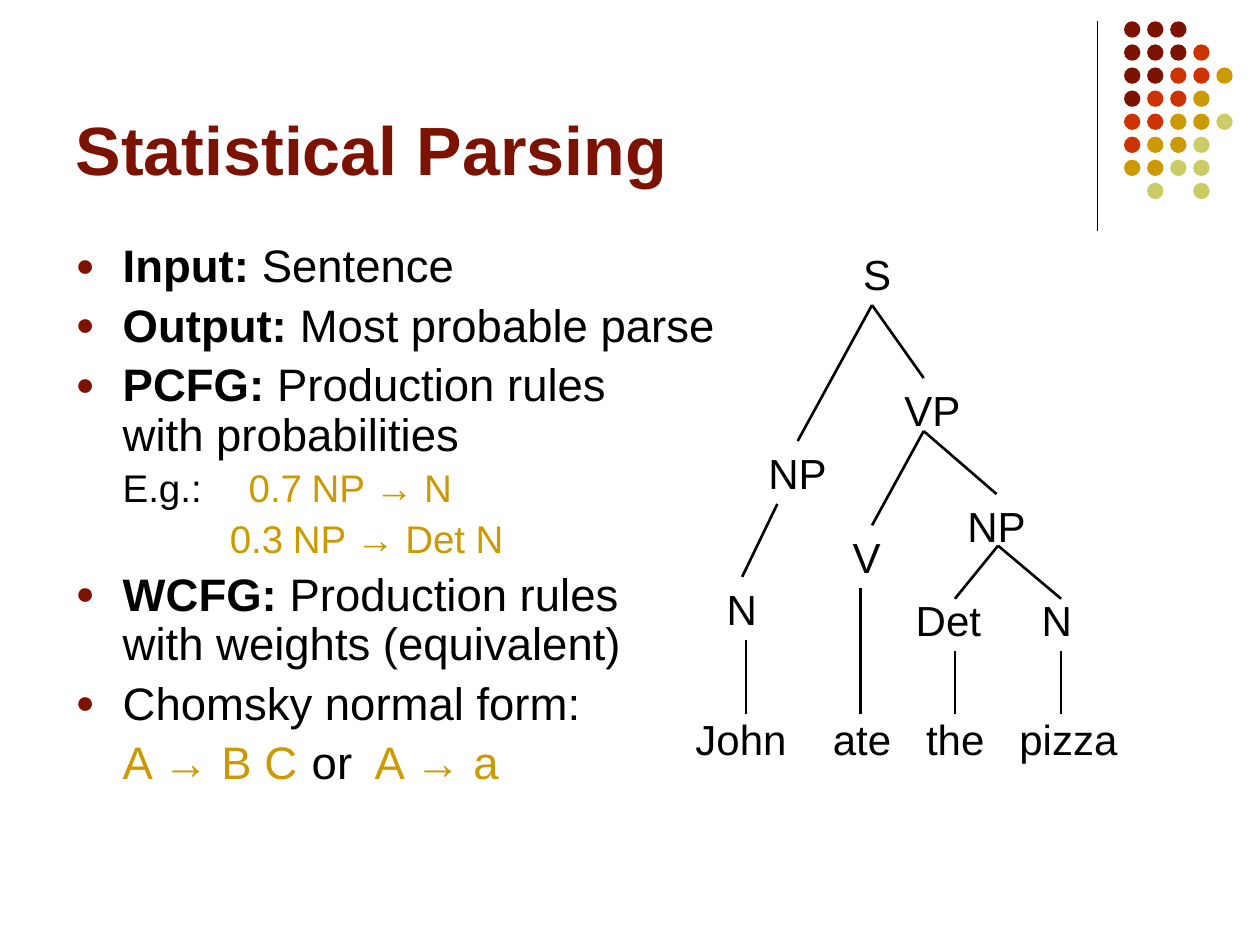
from lxml.etree import SubElement
from pptx import Presentation
from pptx.dml.color import RGBColor
from pptx.enum.shapes import MSO_CONNECTOR as CONN, MSO_SHAPE as SHAPE
from pptx.enum.text import MSO_ANCHOR as ANCHOR, MSO_AUTO_SIZE as AUTO, PP_ALIGN as ALIGN
from pptx.oxml.ns import qn
from pptx.util import Cm, Pt

COLORS = {"black": "000000", "maroon": "7C1302", "red": "CC3300",
          "gold": "CC9900", "lime": "CCCC66"}


def rgb(name):
    return RGBColor.from_string(COLORS[name])


def add_text(p, text, size=24, color="black", bold=False, font="Arial"):
    """Add text to a paragraph; a newline becomes a line break."""
    for i, line in enumerate(text.split("\n")):
        if i:
            p.add_line_break()
        r = p.add_run()
        r.text = line
        r.font.name, r.font.size, r.font.bold = font, Pt(size), bold
        r.font.color.rgb = rgb(color)


def add_tabs(p, stops):
    if stops:
        tabs = SubElement(p._p.get_or_add_pPr(), qn("a:tabLst"))
        for x in stops:
            SubElement(tabs, qn("a:tab"), pos=str(Cm(x)), algn="l")


class Deck:
    """Holds the style and the current slide."""

    def __init__(self, prs):
        self.s = prs.slides.add_slide(prs.slide_layouts[1])

    def place(self, sp, x, y, w, h, anchor):
        sp.left, sp.top, sp.width, sp.height = Cm(x), Cm(y), Cm(w), Cm(h)
        tf = sp.text_frame
        tf.auto_size, tf.word_wrap, tf.vertical_anchor = AUTO.NONE, True, anchor
        return tf

    def title(self, text, *box):
        p = self.place(self.s.shapes.title, *box, ANCHOR.BOTTOM).paragraphs[0]
        p.alignment = ALIGN.LEFT
        add_text(p, text, size=39, color="maroon", bold=True)

    def body(self, items, *box):
        tf = self.place(self.s.placeholders[1], *box, ANCHOR.TOP)
        for i, (kind, margin, stops, runs) in enumerate(items):
            p = tf.paragraphs[0] if i == 0 else tf.add_paragraph()
            size = 22 if kind == "example" else 26
            p.level = 1 if kind == "example" else 0
            p.line_spacing, p.space_before = 0.9, Pt(6 if size == 26 else 5)
            pPr = p._p.get_or_add_pPr()
            pPr.set("marL", str(Cm(margin)))
            pPr.set("indent", str(-Cm(margin) if kind == "bullet" else 0))
            if kind == "bullet":
                clr = SubElement(pPr, qn("a:buClr"))
                SubElement(clr, qn("a:srgbClr"), val=COLORS["maroon"])
                SubElement(pPr, qn("a:buSzPct"), val="70000")
                SubElement(pPr, qn("a:buFont"), typeface="Arial")
                SubElement(pPr, qn("a:buChar"), char="●")
            else:
                SubElement(pPr, qn("a:buNone"))
            add_tabs(p, stops)
            for text, fmt in runs:
                add_text(p, text, size=size, **fmt)

    def label(self, text, x, y, w, stops=()):
        sp = self.s.shapes.add_textbox(Cm(x), Cm(y), Cm(w), Cm(1.27))
        sp.text_frame.word_wrap = False
        p = sp.text_frame.paragraphs[0]
        add_tabs(p, stops)
        add_text(p, text)
        return sp

    def line(self, x1, y1, x2, y2, width=1.5, child=None):
        c = self.s.shapes.add_connector(CONN.STRAIGHT, Cm(x1), Cm(y1), Cm(x2), Cm(y2))
        c.line.color.rgb, c.line.width = rgb("black"), Pt(width)
        SubElement(c._element.spPr, qn("a:effectLst"))
        if child is not None:
            c.end_connect(child, 0)

    def dots(self, rows, x, y, pitch, size):
        key = {"M": "maroon", "R": "red", "G": "gold", "L": "lime"}
        group = self.s.shapes.add_group_shape()
        for i, row in enumerate(rows):
            for j, code in enumerate(row):
                if code not in key:
                    continue
                sp = group.shapes.add_shape(SHAPE.OVAL, Cm(x + j * pitch),
                                            Cm(y + i * pitch), Cm(size), Cm(size))
                sp.shadow.inherit = False
                sp.fill.solid()
                sp.fill.fore_color.rgb = rgb(key[code])
                sp.line.fill.background()


def main():
    prs = Presentation()
    prs.slide_width, prs.slide_height = Cm(25.4), Cm(19.05)
    d = Deck(prs)

    # Corner decoration
    d.line(22.12, 0.43, 22.12, 4.65, width=0.75)
    d.dots(["MMM", "MMMR", "MMRRG", "MRRG", "RRGGL", "RGGL", "GGLL", ".L.L"],
           22.66, 0.43, 0.465, 0.33)

    # Title and list
    d.title("Statistical Parsing", 1.27, 0.33, 20.96, 3.61)
    bold, plain, gold = {"bold": True}, {}, {"color": "gold"}
    d.body([
        ("bullet", 0.95, (), [("Input:", bold), (" Sentence", plain)]),
        ("bullet", 0.95, (), [("Output:", bold), (" Most probable parse", plain)]),
        ("bullet", 0.95, (), [("PCFG:", bold),
                              (" Production rules\nwith probabilities", plain)]),
        ("example", 0.95, (3.19, 4.93), [("E.g.:\t", plain), ("0.7\tNP → N", gold)]),
        ("example", 3.11, (5.05,), [("0.3\tNP → Det N", gold)]),
        ("bullet", 0.95, (), [("WCFG:", bold),
                              (" Production rules\nwith weights (equivalent)", plain)]),
        ("bullet", 0.95, (), [("Chomsky normal form:", plain)]),
        ("formula", 0.95, (4.99, 6.32), [("A → B C", gold), ("\tor\t", plain),
                                         ("A → a", gold)]),
    ], 1.27, 4.78, 13.54, 11.94)

    # Parse tree labels
    d.label("S", 17.15, 4.88, 1.07)
    d.label("John\tate\tthe\tpizza", 13.77, 14.25, 9.02, stops=(2.77, 4.65, 6.53))
    subject = d.label("NP", 15.24, 8.89, 1.68)
    d.label("VP", 17.98, 7.62, 1.65)
    noun = d.label("N", 14.4, 11.63, 1.12)
    d.label("V", 16.94, 10.59, 1.07)
    obj = d.label("NP", 19.25, 9.96, 1.68)
    d.label("Det", 18.21, 11.86, 1.83)
    d.label("N", 20.75, 11.86, 1.12)

    # Branches: parent point, then child points with the label they join
    branches = [
        (17.58, 6.15, [(16.08, 8.89, subject), (18.62, 7.62, None)]),
        (15.67, 10.16, [(15.04, 11.63, noun)]),
        (18.62, 8.69, [(17.58, 10.59, None), (20.12, 9.96, obj)]),
        (20.12, 11, [(19.25, 12.07, None), (21.39, 12.07, None)]),
    ]
    for x, y, children in branches:
        for cx, cy, child in children:
            d.line(x, y, cx, cy, child=child)

    # Stems down to the words
    for x, y in [(15.04, 12.9), (17.35, 11.86), (19.25, 13.13), (21.39, 13.13)]:
        d.line(x, y, x, 14.4)

    prs.save("out.pptx")


if __name__ == "__main__":
    main()
